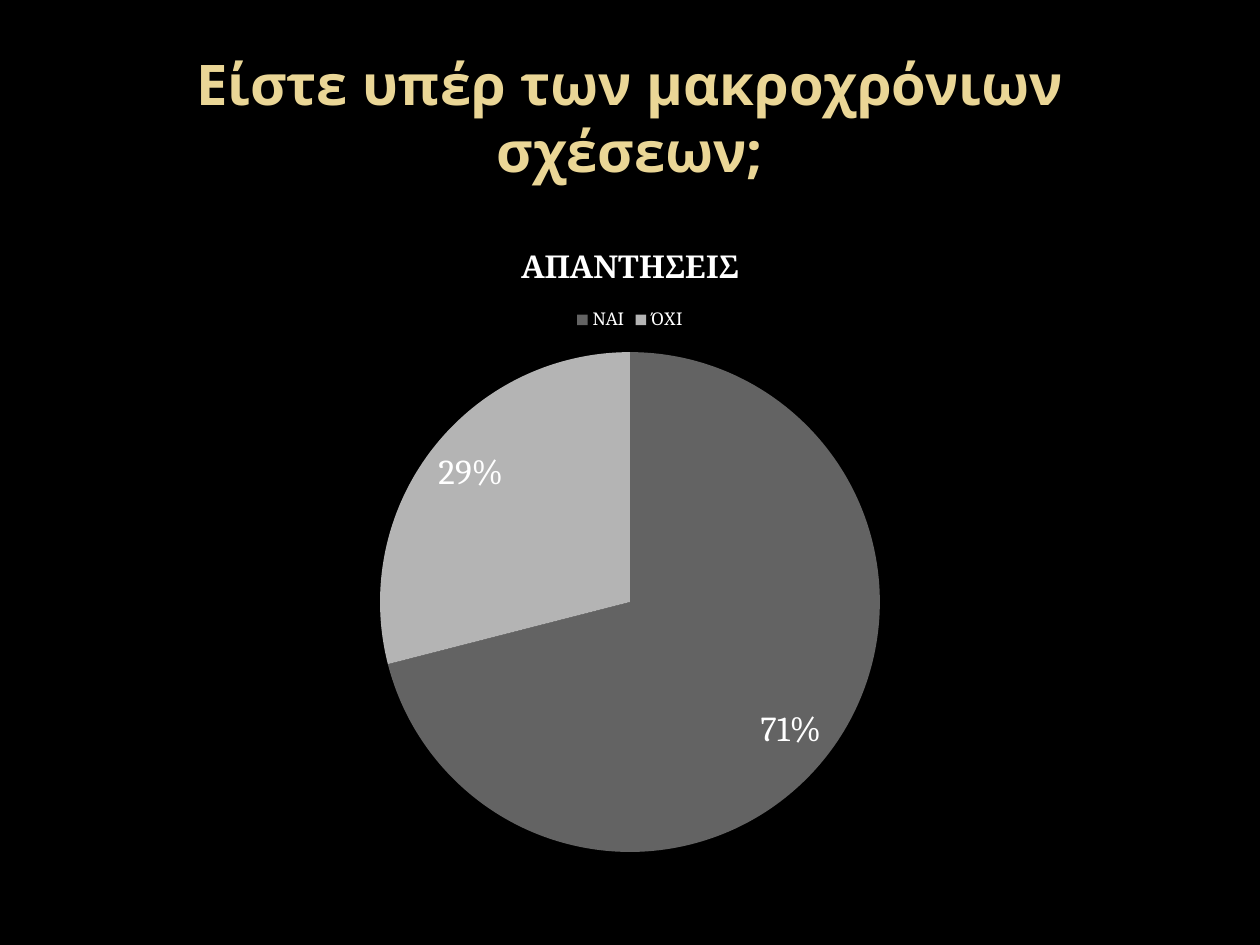
from pptx import Presentation
from pptx.chart.data import CategoryChartData
from pptx.dml.color import RGBColor
from pptx.enum.chart import XL_CHART_TYPE, XL_LABEL_POSITION, XL_LEGEND_POSITION
from pptx.enum.text import MSO_ANCHOR, PP_ALIGN
from pptx.util import Inches, Pt

PIE = XL_CHART_TYPE.PIE
TOP = XL_LEGEND_POSITION.TOP
INSIDE = XL_LABEL_POSITION.INSIDE_END
MIDDLE = MSO_ANCHOR.MIDDLE
CENTER = PP_ALIGN.CENTER

BLACK = RGBColor(0x00, 0x00, 0x00)
WHITE = RGBColor(0xFF, 0xFF, 0xFF)
GOLD = RGBColor(0xEA, 0xD6, 0x96)
DARK = RGBColor(0x63, 0x63, 0x63)
LIGHT = RGBColor(0xB4, 0xB4, 0xB4)

ANSWERS = [("ΝΑΙ", 71, DARK), ("ΌΧΙ", 29, LIGHT)]


def style(font, name, size, color, bold=False):
    font.name = name
    font.size = Pt(size)
    font.bold = bold
    font.color.rgb = color


def add_title(slide, left, top, width, height):
    box = slide.shapes.add_textbox(left, top, width, height)
    frame = box.text_frame
    frame.word_wrap = True
    frame.vertical_anchor = MIDDLE
    para = frame.paragraphs[0]
    para.text = "Είστε υπέρ των μακροχρόνιων σχέσεων;"
    para.alignment = CENTER
    style(para.font, "Noto Sans", 32, GOLD, True)


def add_pie(slide, left, top, width, height):
    names, values, colors = zip(*ANSWERS)
    data = CategoryChartData()
    data.categories = names
    data.add_series("ΑΠΑΝΤΗΣΕΙΣ", values)
    chart = slide.shapes.add_chart(PIE, left, top, width, height, data).chart
    style(chart.font, "Cambria", 10, WHITE)

    # Heading and legend
    chart.has_title = True
    head = chart.chart_title.text_frame.paragraphs[0]
    head.text = "ΑΠΑΝΤΗΣΕΙΣ"
    style(head.font, "Cambria", 18, WHITE, True)
    chart.has_legend = True
    chart.legend.position = TOP
    chart.legend.include_in_layout = False

    # Slices
    plot = chart.plots[0]
    plot.vary_by_categories = True
    for index, color in enumerate(colors):
        fill = plot.series[0].points[index].format.fill
        fill.solid()
        fill.fore_color.rgb = color

    # Percent labels
    plot.has_data_labels = True
    labels = plot.data_labels
    labels.show_percentage = True
    labels.show_value = False
    labels.number_format = "0%"
    labels.number_format_is_linked = False
    labels.position = INSIDE
    style(labels.font, "Cambria", 20, WHITE)


def main():
    deck = Presentation()
    deck.slide_width = Inches(10)
    deck.slide_height = Inches(7.5)
    slide = deck.slides.add_slide(deck.slide_layouts[6])
    back = slide.background.fill
    back.solid()
    back.fore_color.rgb = BLACK

    add_title(slide, Inches(0.5), Inches(0.3), Inches(9), Inches(1.25))
    add_pie(slide, Inches(0.5), Inches(1.75), Inches(9), Inches(5.15))
    deck.save("out.pptx")


if __name__ == "__main__":
    main()
